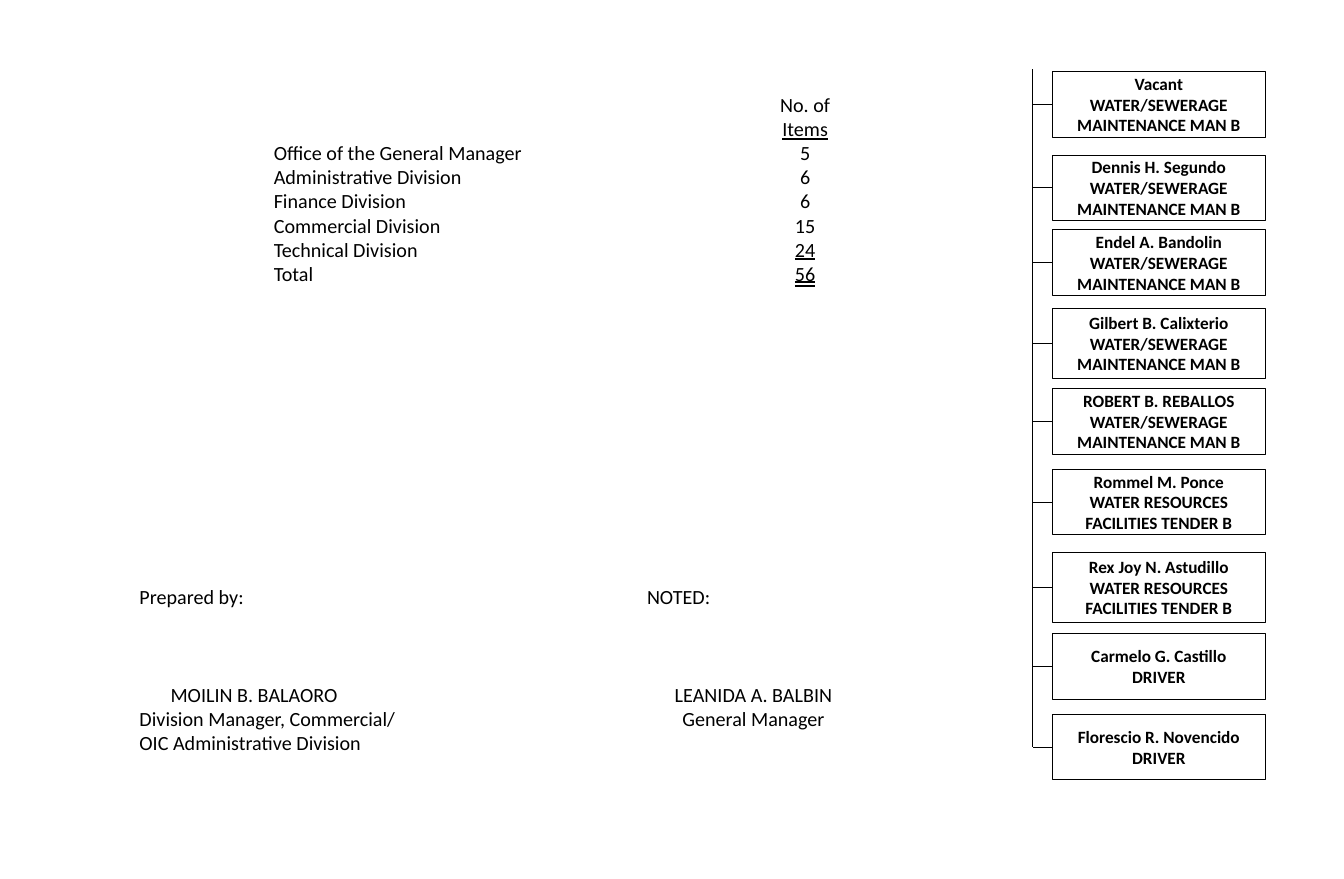
from dataclasses import dataclass

from lxml import etree
from pptx import Presentation
from pptx import util as u
from pptx.dml.color import RGBColor
from pptx.enum import shapes, text
from pptx.oxml.ns import qn


@dataclass(frozen=True)
class Theme:
    font: str = "Calibri"
    ink: RGBColor = RGBColor(0, 0, 0)
    paper: RGBColor = RGBColor(255, 255, 255)
    body: int = 14
    label: int = 12
    edge: float = 0.5
    rule: float = 0.75


THEME = Theme()
COLS, ROWS = 130, 85
WIDE, HIGH = u.Inches(13), u.Inches(8.5)

FITTER = ("WATER/SEWERAGE", "MAINTENANCE MAN B")
TENDER = ("WATER RESOURCES", "FACILITIES TENDER B")
DRIVER = ("DRIVER",)

# Row below the top of the region, height in rows, name, post
STAFF = [
    (0.2, 6.4, "Vacant", FITTER),
    (8.3, 6.3, "Dennis H. Segundo", FITTER),
    (15.5, 6.4, "Endel A. Bandolin", FITTER),
    (23.1, 6.8, "Gilbert B. Calixterio", FITTER),
    (30.9, 6.3, "ROBERT B. REBALLOS", FITTER),
    (38.7, 6.3, "Rommel M. Ponce", TENDER),
    (46.7, 6.8, "Rex Joy N. Astudillo", TENDER),
    (54.6, 6.3, "Carmelo G. Castillo", DRIVER),
    (62.4, 6.3, "Florescio R. Novencido", DRIVER),
]

SINGLE = text.MSO_UNDERLINE.SINGLE_LINE
DOUBLE = text.MSO_UNDERLINE.DOUBLE_LINE
ITEMS = [
    ("", "No. of", None),
    ("", "Items", SINGLE),
    ("Office of the General Manager", "5", None),
    ("Administrative Division", "6", None),
    ("Finance Division", "6", None),
    ("Commercial Division", "15", None),
    ("Technical Division", "24", SINGLE),
    ("Total", "56", DOUBLE),
]


def col(n):
    return round(WIDE * n / COLS)


def row(n):
    return round(HIGH * n / ROWS)


def style(para, size, bold=False):
    font = para.font
    font.name, font.size, font.bold = THEME.font, u.Pt(size), bold
    font.color.rgb = THEME.ink


def set_tabs(para, stops):
    """Give a paragraph tab stops, as (columns, alignment) pairs."""
    tabs = etree.Element(qn("a:tabLst"))
    for pos, align in stops:
        etree.SubElement(tabs, qn("a:tab"), pos=str(col(pos)), algn=align)
    para._p.get_or_add_pPr().insert(0, tabs)


def add_line(slide, x1, y1, x2, y2):
    line = slide.shapes.add_connector(
        shapes.MSO_CONNECTOR.STRAIGHT, col(x1), row(y1), col(x2), row(y2))
    line.line.color.rgb = THEME.ink
    line.line.width = u.Pt(THEME.rule)
    etree.SubElement(line._element.spPr, qn("a:effectLst"))
    return line


def add_card(slide, x, y, w, h, lines):
    card = slide.shapes.add_shape(
        shapes.MSO_SHAPE.RECTANGLE, col(x), row(y), col(w), row(h))
    card.shadow.inherit = False
    card.fill.solid()
    card.fill.fore_color.rgb = THEME.paper
    card.line.color.rgb = THEME.ink
    card.line.width = u.Pt(THEME.edge)
    frame = card.text_frame
    frame.word_wrap = True
    frame.vertical_anchor = text.MSO_ANCHOR.MIDDLE
    frame.text = "\n".join(lines)
    for para in frame.paragraphs:
        para.alignment = text.PP_ALIGN.CENTER
        style(para, THEME.label, bold=True)
    return card


def add_frame(slide, x, y, w, h):
    frame = slide.shapes.add_textbox(col(x), row(y), col(w), row(h)).text_frame
    frame.word_wrap = True
    frame.vertical_anchor = text.MSO_ANCHOR.MIDDLE
    return frame


def add_paras(frame, count):
    return [frame.paragraphs[0]] + [frame.add_paragraph() for _ in range(count - 1)]


def add_staff(slide, x, y, w, h):
    """Hang the staff cards on a spine along the region's left side."""
    left = x + 1.9
    joint = y + 4
    for top, tall, name, post in STAFF:
        card = add_card(slide, left, y + top, w - 1.9, tall, (name, *post))
        mid = y + top + tall / 2
        tick = add_line(slide, x, mid, left, mid)
        tick.end_connect(card, 1)
    add_line(slide, x, joint, x, mid)
    add_line(slide, x, joint, x, y)


def add_items(slide, x, y, w, h):
    paras = add_paras(add_frame(slide, x, y, w, h), len(ITEMS))
    for para, (name, count, under) in zip(paras, ITEMS):
        set_tabs(para, [(51.4, "ctr")])
        style(para, THEME.body)
        para.add_run().text = name + "\t"
        run = para.add_run()
        run.text = count
        if under:
            run.font.underline = under


def add_signs(slide, x, y, w, h):
    heads = [(49.1, "l")]
    names = [(11.1, "ctr"), (59.4, "ctr")]
    posts = names[1:]
    lines = [
        ("Prepared by:\tNOTED:", heads, 0),
        ("\tMOILIN B. BALAORO\tLEANIDA A. BALBIN", names, 51),
        ("Division Manager, Commercial/\tGeneral Manager", posts, 0),
        ("OIC Administrative Division", [], 0),
    ]
    paras = add_paras(add_frame(slide, x, y, w, h), len(lines))
    for para, (words, stops, gap) in zip(paras, lines):
        para.add_run().text = words
        if stops:
            set_tabs(para, stops)
        para.space_before = u.Pt(gap)
        style(para, THEME.body)


def main():
    deck = Presentation()
    deck.slide_width, deck.slide_height = WIDE, HIGH
    slide = deck.slides.add_slide(deck.slide_layouts[6])
    add_staff(slide, 99.9, 6.7, 22.5, 68.7)
    add_items(slide, 25.5, 8.3, 60.3, 19.9)
    add_signs(slide, 12.5, 56, 81.1, 17.5)
    deck.save("out.pptx")


if __name__ == "__main__":
    main()
